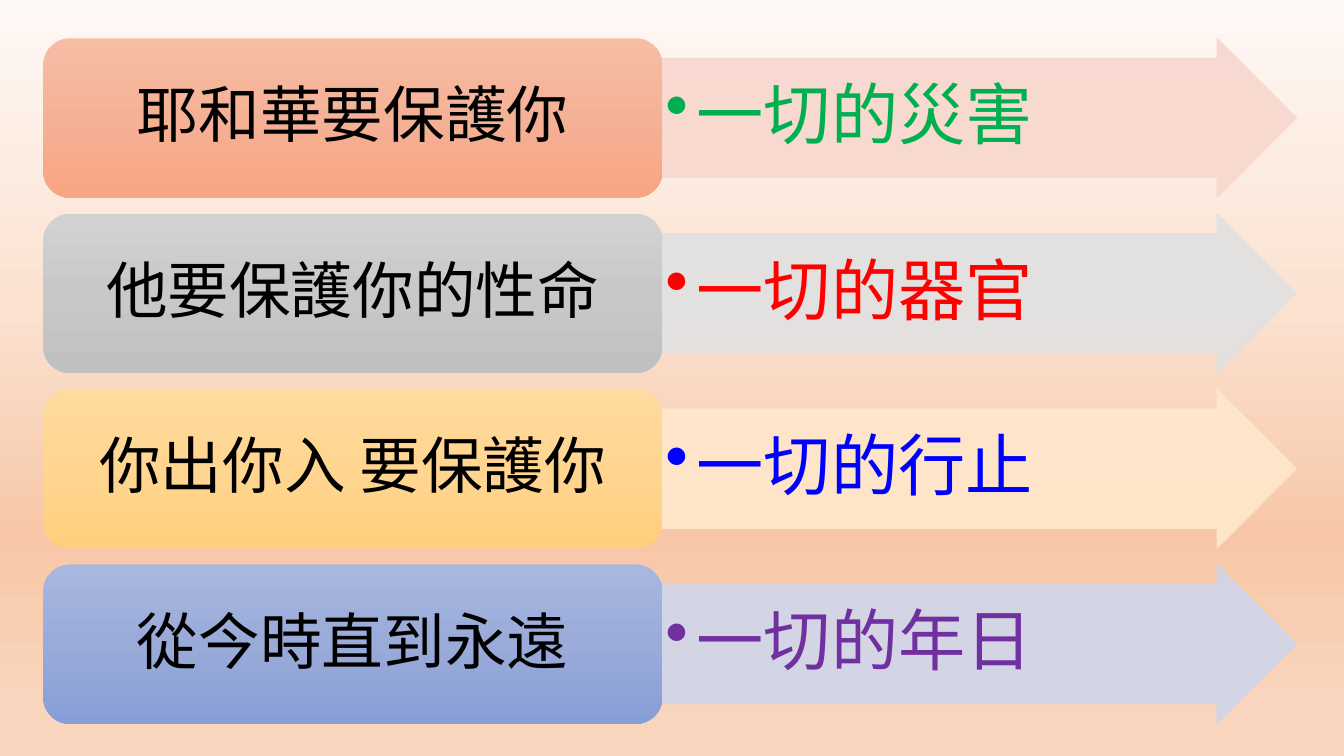
"""Build a slide of four promises, each box pointing to what it covers."""
from lxml.etree import SubElement
from pptx import Presentation
from pptx.dml.color import RGBColor
from pptx.enum.shapes import MSO_SHAPE as Preset
from pptx.enum.text import MSO_ANCHOR as Anchor, PP_ALIGN as Align
from pptx.oxml.ns import qn
from pptx.util import Inches, Pt

COLORS = {
    "background": ["FEF8F5", "FBE2D1", "F7C7A7", "F9D5BD"],
    "orange": ["F7BDA5", "F5B196", "F8A582"],
    "gray": ["D2D2D2", "C8C8C8", "C0C0C0"],
    "gold": ["FFDB9E", "FFD590", "FFD07C"],
    "blue": ["A8B7DF", "9AABD9", "889ED7"],
    "orange arrow": "F8D7CE",
    "gray arrow": "E1E1E1",
    "gold arrow": "FFE8CC",
    "blue arrow": "CFD5EA",
    "promise": "000000",
    "disaster": "00B050",
    "organs": "FF0000",
    "conduct": "0000FF",
    "years": "7030A0",
}
ROWS = [
    ("耶和華要保護你", "一切的災害", "orange", "disaster"),
    ("他要保護你的性命", "一切的器官", "gray", "organs"),
    ("你出你入 要保護你", "一切的行止", "gold", "conduct"),
    ("從今時直到永遠", "一切的年日", "blue", "years"),
]
LEFT, TOP, PITCH, HEIGHT = 0.43, 0.38, 1.74, 1.58
BOX_WIDTH, ARROW_WIDTH = 6.14, 6.29


def paint_gradient(fill, element, colors, positions):
    """Fill from top to bottom with the given colour stops."""
    fill.gradient()
    fill.gradient_angle = 270
    stops = element.find(".//" + qn("a:gsLst"))
    for stop in list(stops):
        stops.remove(stop)
    for color, position in zip(colors, positions):
        stop = SubElement(stops, qn("a:gs"), pos=str(position * 1000))
        SubElement(stop, qn("a:srgbClr"), val=color)


def write_text(shape, text, color, insets, paragraph_format, size):
    """Write one paragraph into a shape."""
    frame = shape.text_frame
    side, edge = (Inches(inset) for inset in insets)
    frame_format = {
        "word_wrap": True, "vertical_anchor": Anchor.MIDDLE,
        "margin_left": side, "margin_right": side,
        "margin_top": edge, "margin_bottom": edge,
    }
    for name, value in frame_format.items():
        setattr(frame, name, value)
    paragraph = frame.paragraphs[0]
    for name, value in paragraph_format.items():
        setattr(paragraph, name, value)
    run = paragraph.add_run()
    run.text = text
    for name, value in {"name": "Calibri", "size": Pt(size)}.items():
        setattr(run.font, name, value)
    run.font.color.rgb = RGBColor.from_string(COLORS[color])
    return paragraph


presentation = Presentation()
presentation.slide_width = Inches(13.33)
presentation.slide_height = Inches(7.5)
slide = presentation.slides.add_slide(presentation.slide_layouts[6])
paint_gradient(slide.background.fill, slide.element, COLORS["background"], [0, 40, 71, 93])

for index, (promise, scope, theme, scope_color) in enumerate(ROWS):
    top = Inches(TOP + index * PITCH)

    arrow = slide.shapes.add_shape(
        Preset.RIGHT_ARROW, Inches(LEFT + BOX_WIDTH), top, Inches(ARROW_WIDTH), Inches(HEIGHT))
    arrow.shadow.inherit = False
    arrow.adjustments[0] = 0.75
    arrow.adjustments[1] = 0.5
    arrow_color = RGBColor.from_string(COLORS[theme + " arrow"])
    for fill in (arrow.fill, arrow.line.fill):
        fill.solid()
        fill.fore_color.rgb = arrow_color
    arrow.line.width = Pt(0.5)
    for color in arrow.element.iter(qn("a:srgbClr")):
        SubElement(color, qn("a:alpha"), val="90000")
    paragraph = write_text(
        arrow, scope, scope_color, (0.03, 0.03),
        {"alignment": Align.LEFT, "level": 1, "line_spacing": 0.9, "space_after": Pt(7)}, 48)
    properties = paragraph.runs[0].font
    bullet_format = paragraph.alignment is not None and paragraph._p.get_or_add_pPr()
    bullet_format.set("marL", str(Inches(0.31)))
    bullet_format.set("indent", str(-Inches(0.31)))
    SubElement(bullet_format, qn("a:buChar"), char="•")

    box = slide.shapes.add_shape(
        Preset.ROUNDED_RECTANGLE, Inches(LEFT), top, Inches(BOX_WIDTH), Inches(HEIGHT))
    box.shadow.inherit = False
    box.line.fill.background()
    paint_gradient(box.fill, box.element, COLORS[theme], [0, 50, 100])
    write_text(
        box, promise, "promise", (0.18, 0.09),
        {"alignment": Align.CENTER, "line_spacing": 0.9, "space_after": Pt(15)}, 44)

presentation.save("out.pptx")
